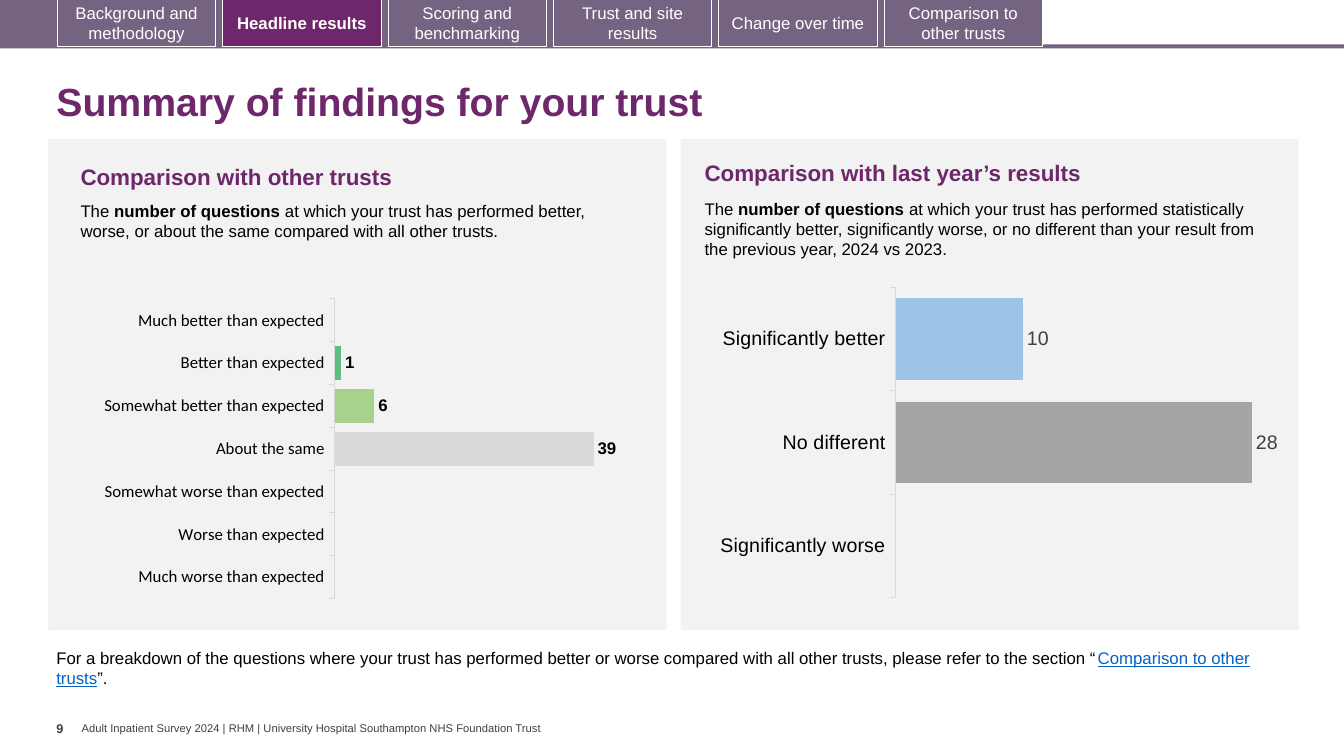
from lxml import etree
from pptx import Presentation
from pptx.chart.data import CategoryChartData
from pptx.dml.color import RGBColor
from pptx.enum.chart import XL_CHART_TYPE, XL_LABEL_POSITION, XL_TICK_LABEL_POSITION, XL_TICK_MARK
from pptx.enum.shapes import MSO_SHAPE
from pptx.enum.text import MSO_ANCHOR, MSO_AUTO_SIZE, PP_ALIGN
from pptx.oxml.ns import qn
from pptx.util import Pt

PX = 9144  # 100 px to the inch
RECT = MSO_SHAPE.RECTANGLE
BAR = XL_CHART_TYPE.BAR_CLUSTERED
OUT_END = XL_LABEL_POSITION.OUTSIDE_END
LOW = XL_TICK_LABEL_POSITION.LOW
OUTER, NO_TICK = XL_TICK_MARK.OUTSIDE, XL_TICK_MARK.NONE
MIDDLE, TOP = MSO_ANCHOR.MIDDLE, MSO_ANCHOR.TOP
NO_FIT = MSO_AUTO_SIZE.NONE
LEFT, CENTER = PP_ALIGN.LEFT, PP_ALIGN.CENTER

COLORS = {
    "plum": "6D276A", "mauve": "756382", "panel": "F2F2F2", "white": "FFFFFF",
    "black": "000000", "dark": "404040", "link": "0563C1", "axis": "D9D9D9",
}
TABS = [
    "Background and methodology", "Headline results", "Scoring and benchmarking",
    "Trust and site results", "Change over time", "Comparison to other trusts",
]
ACTIVE = "Headline results"
TRUSTS = [
    ("Much better than expected", None, "419999"),
    ("Better than expected", 1, "5FBD83"),
    ("Somewhat better than expected", 6, "A9D18E"),
    ("About the same", 39, "D9D9D9"),
    ("Somewhat worse than expected", None, "FFD966"),
    ("Worse than expected", None, "F1BE48"),
    ("Much worse than expected", None, "E87722"),
]
YEARS = [
    ("Significantly better", 10, "9DC3E6"),
    ("No different", 28, "A5A5A5"),
    ("Significantly worse", None, "7030A0"),
]


def rgb(name):
    return RGBColor.from_string(COLORS.get(name, name))


def scale(*box):
    return [n * PX for n in box]


def style(font, size, color, bold=False, face="Arial"):
    font.name, font.size, font.bold = face, Pt(size), bold
    font.color.rgb = rgb(color)


def add_rect(slide, box, fill=None, line=None):
    shape = slide.shapes.add_shape(RECT, *scale(*box))
    shape.shadow.inherit = False
    if fill:
        shape.fill.solid()
        shape.fill.fore_color.rgb = rgb(fill)
    else:
        shape.fill.background()
    if line:
        shape.line.color.rgb = rgb(line)
        shape.line.width = Pt(0.75)
    else:
        shape.line.fill.background()
    return shape


def add_tab(slide, left, label):
    active = label == ACTIVE
    shape = add_rect(slide, (left, -1, 157, 47), "plum" if active else None, "white")
    frame = shape.text_frame
    frame.text = label
    frame.word_wrap = True
    frame.vertical_anchor = MIDDLE
    para = frame.paragraphs[0]
    para.alignment = CENTER
    style(para.runs[0].font, 12, "white", active)


def add_text(slide, box, parts, size, color="black", bold=False, inset=None,
             wrap=True, anchor=TOP):
    """Parts are plain strings or (text, look) pairs, look being "bold" or "link"."""
    frame = slide.shapes.add_textbox(*scale(*box)).text_frame
    frame.word_wrap = wrap
    frame.vertical_anchor = anchor
    if inset is not None:
        frame.margin_left = frame.margin_right = 0
        frame.margin_top = frame.margin_bottom = inset * PX
    for part in parts:
        text, look = (part, "") if isinstance(part, str) else part
        run = frame.paragraphs[0].add_run()
        run.text = text
        style(run.font, size, "link" if look == "link" else color, bold or look == "bold")
        if look == "link":
            run.font.underline = True


def place_plot(chart, plot):
    """Fix the inner plot area at x, y, w, h as shares of the chart."""
    area = chart._chartSpace.chart.plotArea
    for old in area.findall(qn("c:layout")):
        area.remove(old)
    layout = etree.Element(qn("c:layout"))
    manual = etree.SubElement(layout, qn("c:manualLayout"))
    pairs = [("layoutTarget", "inner"), ("xMode", "edge"), ("yMode", "edge")]
    for tag, val in pairs + list(zip("xywh", plot)):
        etree.SubElement(manual, qn("c:" + tag)).set("val", str(val))
    area.insert(0, layout)


def add_bars(slide, box, rows, top, plot, size, face, color, bold):
    data = CategoryChartData(number_format="0")
    data.categories = [row[0] for row in rows]
    data.add_series("Series 1", [row[1] for row in rows])
    chart = slide.shapes.add_chart(BAR, *scale(*box), data).chart
    chart.has_legend = chart.has_title = False
    style(chart.font, size, "black", face=face)
    place_plot(chart, plot)

    cats = chart.category_axis
    cats.reverse_order = True
    cats.has_major_gridlines = False
    cats.major_tick_mark, cats.minor_tick_mark = OUTER, NO_TICK
    cats.tick_label_position = LOW
    cats.format.line.color.rgb = rgb("axis")
    cats.format.line.width = Pt(0.75)
    style(cats.tick_labels.font, size, "black", face=face)

    vals = chart.value_axis
    vals.minimum_scale, vals.maximum_scale = 0, top
    vals.has_major_gridlines = False
    vals.visible = False

    bars = chart.plots[0]
    bars.gap_width = 27
    bars.vary_by_categories = False
    series = bars.series[0]
    series.invert_if_negative = False
    for i, row in enumerate(rows):
        fill = series.points[i].format.fill
        fill.solid()
        fill.fore_color.rgb = rgb(row[2])
    labels = series.data_labels
    labels.show_value = True
    labels.position = OUT_END
    labels.number_format, labels.number_format_is_linked = "0", False
    style(labels.font, size, color, bold)


def set_title(slide, text):
    title = slide.shapes.title
    title.left, title.top, title.width, title.height = scale(46, 67, 1249, 72)
    frame = title.text_frame
    frame.text = text
    frame.auto_size = NO_FIT
    frame.word_wrap = True
    frame.vertical_anchor = MIDDLE
    para = frame.paragraphs[0]
    para.alignment = LEFT
    para.line_spacing = 0.9
    style(para.runs[0].font, 28, "plum", True)


def main():
    deck = Presentation()
    deck.slide_width, deck.slide_height = scale(1333, 750)
    slide = deck.slides.add_slide(deck.slide_layouts[5])

    add_rect(slide, (-3, 44, 1336, 4), "mauve")
    add_rect(slide, (-3, 0, 1037, 47), "mauve")
    for i, label in enumerate(TABS):
        add_tab(slide, 57 + 164 * i, label)
    set_title(slide, "Summary of findings for your trust")

    for left in (48, 675):
        add_rect(slide, (left, 138, 613, 487), "panel")
    count = ("number of questions ", "bold")

    add_text(slide, (70, 157, 552, 37), ["Comparison with other trusts"], 16, "plum", True)
    add_text(slide, (70, 194, 529, 71), [
        "The ", count, "at which your trust has performed better, worse, or about "
        "the same compared with all other trusts."], 12)
    add_bars(slide, (41, 272, 623, 341), TRUSTS, 45, (0.467, 0.072, 0.476, 0.872),
             12, "Calibri", "black", True)

    add_text(slide, (689, 153, 548, 37), ["Comparison with last year’s results"],
             16, "plum", True)
    add_text(slide, (689, 192, 574, 71), [
        "The ", count, "at which your trust has performed statistically significantly "
        "better, significantly worse, or no different than your result from the "
        "previous year, 2024 vs 2023."], 12)
    add_bars(slide, (664, 273, 623, 339), YEARS, 30, (0.36, 0.035, 0.608, 0.909),
             14, "Arial", "dark", False)

    add_text(slide, (46, 638, 1221, 50), [
        "For a breakdown of the questions where your trust has performed better or worse "
        "compared with all other trusts, please refer to the section “",
        ("Comparison to other trusts", "link"), "”."], 12)
    add_text(slide, (56, 710, 25, 40), ["9"], 9, "dark", True, inset=5, wrap=False)
    add_text(slide, (81, 716, 610, 13), [
        "Adult Inpatient Survey 2024 | RHM | University Hospital Southampton "
        "NHS Foundation Trust"], 8, "dark", inset=0, anchor=MIDDLE)
    deck.save("out.pptx")


if __name__ == "__main__":
    main()
